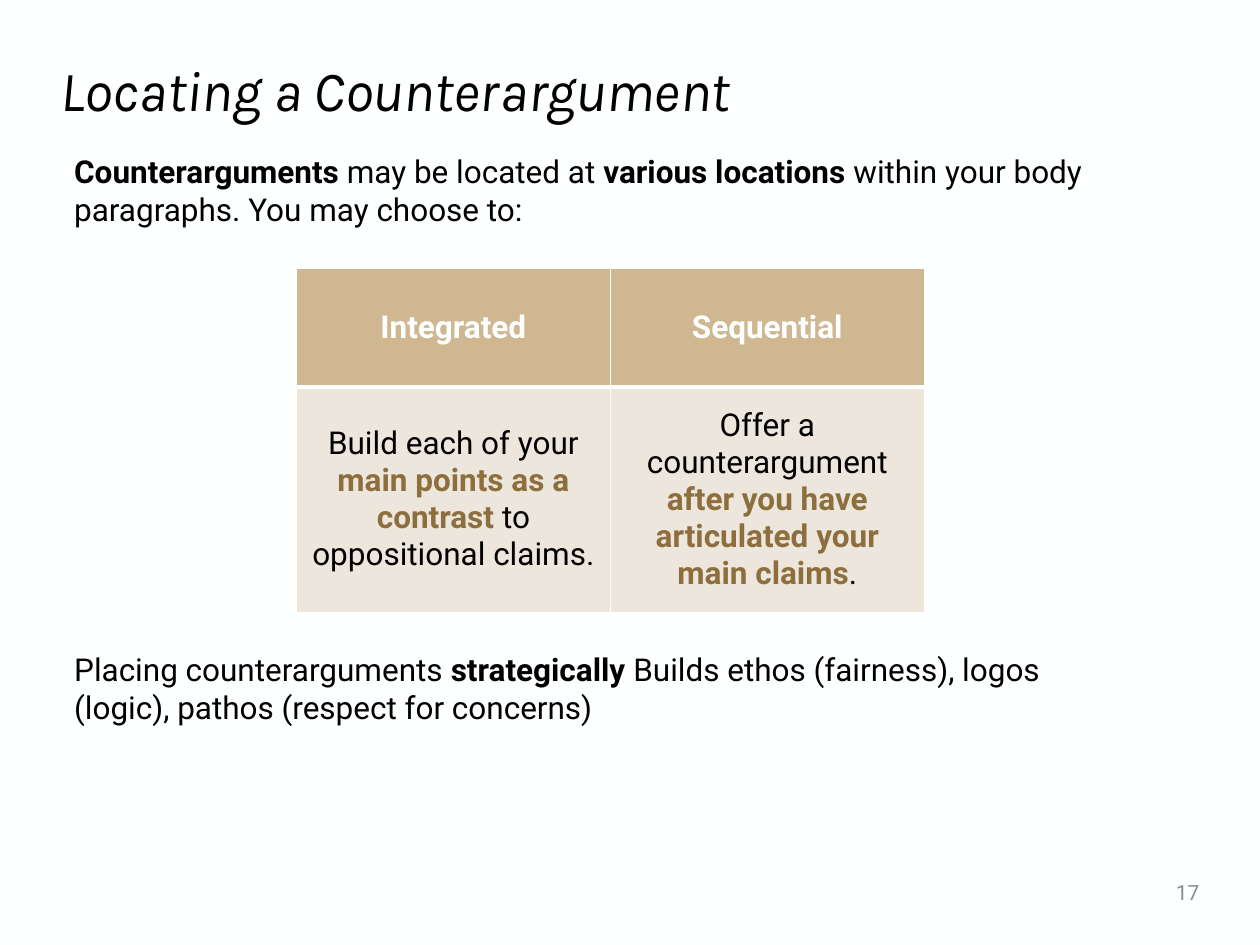
from lxml import etree
from pptx import Presentation
from pptx.dml.color import RGBColor
from pptx.enum.text import MSO_ANCHOR, PP_ALIGN
from pptx.oxml.ns import qn
from pptx.util import Pt

TOP, MIDDLE = MSO_ANCHOR.TOP, MSO_ANCHOR.MIDDLE
LEFT, CENTER, RIGHT = PP_ALIGN.LEFT, PP_ALIGN.CENTER, PP_ALIGN.RIGHT
WHITE, BLACK, GRAY = "FEFFFF", "000000", "8C8C8C"
GOLD, SAND, BROWN = "CFB891", "EDE6DC", "8D6F3D"

TITLE = [("Locating a Counterargument", False, BLACK)]
INTRO = [
    ("Counterarguments", True, BLACK),
    (" may be located at ", False, BLACK),
    ("various locations ", True, BLACK),
    ("within your body paragraphs. You may choose to:", False, BLACK),
]
CLOSING = [
    ("Placing counterarguments ", False, BLACK),
    ("strategically ", True, BLACK),
    ("Builds ethos (fairness), logos (logic), pathos (respect for concerns)", False, BLACK),
]
PAGE_NUMBER = [("17", False, GRAY)]
APPROACHES = [
    [
        [("Integrated", True, WHITE)],
        [("Sequential", True, WHITE)],
    ],
    [
        [
            ("Build each of your ", False, BLACK),
            ("main points as a contrast ", True, BROWN),
            ("to oppositional claims.", False, BLACK),
        ],
        [
            ("Offer a counterargument ", False, BLACK),
            ("after you have articulated your main claims", True, BROWN),
            (".", False, BLACK),
        ],
    ],
]
ROW_HEIGHTS = [67.7, 128.7]
ROW_FILLS = [GOLD, SAND]
ROW_BOTTOM_LINES = [3, 1]
COLUMN_WIDTH = 179.4


def color(value):
    return RGBColor.from_string(value)


def write(frame, pieces, size=18, font="Roboto", italic=False, align=LEFT):
    paragraph = frame.paragraphs[0]
    paragraph.alignment = align
    for words, bold, ink in pieces:
        run = paragraph.add_run()
        run.text = words
        run.font.name = font
        run.font.size = Pt(size)
        run.font.bold = bold
        run.font.italic = italic
        run.font.color.rgb = color(ink)
    return paragraph


def add_text(slide, place, pieces, anchor=TOP, **style):
    frame = slide.shapes.add_textbox(*map(Pt, place)).text_frame
    frame.word_wrap = True
    frame.vertical_anchor = anchor
    return write(frame, pieces, **style)


def add_borders(cell, widths):
    properties = cell._tc.get_or_add_tcPr()
    for position, (side, width) in enumerate(widths.items()):
        line = etree.Element(qn(f"a:ln{side}"), w=str(Pt(width)))
        fill = etree.SubElement(line, qn("a:solidFill"))
        etree.SubElement(fill, qn("a:srgbClr"), val=WHITE)
        properties.insert(position, line)


def add_approaches(slide):
    columns = len(APPROACHES[0])
    table = slide.shapes.add_table(
        len(APPROACHES), columns, Pt(169.4), Pt(153.5),
        Pt(COLUMN_WIDTH * columns), Pt(sum(ROW_HEIGHTS)),
    ).table
    for column in table.columns:
        column.width = Pt(COLUMN_WIDTH)
    top_line = 1
    for r, row in enumerate(APPROACHES):
        table.rows[r].height = Pt(ROW_HEIGHTS[r])
        bottom_line = ROW_BOTTOM_LINES[r]
        for c, pieces in enumerate(row):
            cell = table.cell(r, c)
            cell.vertical_anchor = MIDDLE
            cell.fill.solid()
            cell.fill.fore_color.rgb = color(ROW_FILLS[r])
            add_borders(cell, {"L": 1, "R": 1, "T": top_line, "B": bottom_line})
            write(cell.text_frame, pieces, align=CENTER)
        top_line = bottom_line


def main():
    deck = Presentation()
    deck.slide_width, deck.slide_height = Pt(720), Pt(540)
    slide = deck.slides.add_slide(deck.slide_layouts[6])
    slide.background.fill.solid()
    slide.background.fill.fore_color.rgb = color(WHITE)

    title = add_text(slide, (27.5, 30, 665, 46), TITLE, MIDDLE,
                     size=32.4, font="Karla", italic=True)
    title.line_spacing = 0.9
    add_text(slide, (35.3, 83.5, 620, 60), INTRO)
    add_approaches(slide)
    add_text(slide, (35.3, 368, 586, 51), CLOSING)
    add_text(slide, (606, 495.5, 86.5, 29), PAGE_NUMBER, MIDDLE, size=12, align=RIGHT)
    deck.save("out.pptx")


if __name__ == "__main__":
    main()
